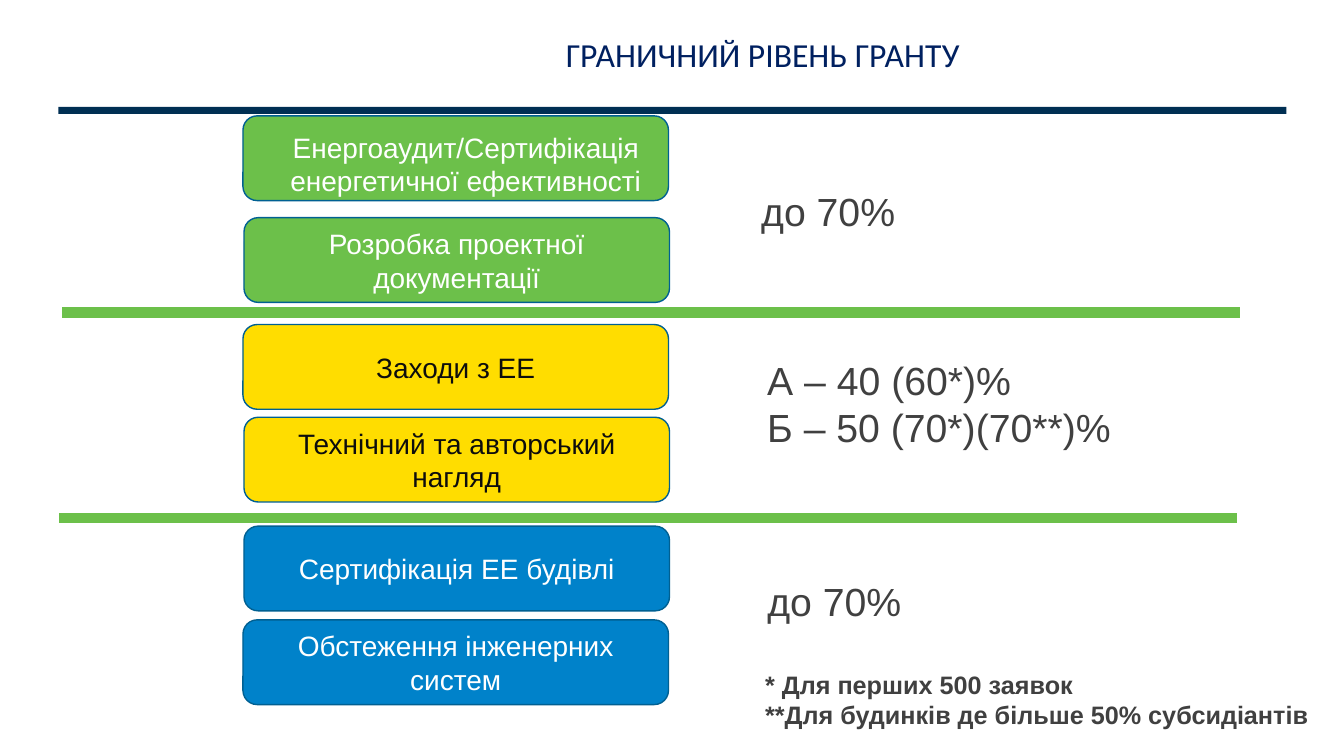
from dataclasses import dataclass

from lxml import etree
from pptx import Presentation
from pptx.dml.color import RGBColor
from pptx.enum import shapes, text
from pptx.oxml import ns
from pptx.util import Inches, Pt


@dataclass(frozen=True)
class Theme:
    heading_font: str = "Calibri"
    body_font: str = "Arial"
    title: str = "002060"
    rule: str = "002F53"
    outline: str = "006092"
    green: str = "6CC04A"
    yellow: str = "FFDD00"
    blue: str = "0082CA"
    light: str = "FFFFFF"
    dark: str = "0D0D0D"
    gray: str = "404040"
    title_size: int = 24
    step_size: int = 20
    rate_size: int = 28
    note_size: int = 18


def write(tf, lines, *, size, color, font, bold=False, align=text.PP_ALIGN.LEFT,
          anchor=text.MSO_ANCHOR.TOP, inset=None, spacing=None):
    """Fill a text frame, one paragraph per line."""
    tf.word_wrap = True
    tf.auto_size = text.MSO_AUTO_SIZE.NONE
    tf.vertical_anchor = anchor
    if inset is not None:
        tf.margin_left = tf.margin_right = Inches(inset)
        tf.margin_top = tf.margin_bottom = Inches(inset)
    for i, line in enumerate(lines):
        p = tf.add_paragraph() if i else tf.paragraphs[0]
        p.alignment = align
        if spacing:
            p.line_spacing = spacing
        r = p.add_run()
        r.text = line
        r.font.name, r.font.size, r.font.bold = font, Pt(size), bold
        r.font.color.rgb = RGBColor.from_string(color)


class GrantSlide:
    def __init__(self, prs, theme):
        self.theme = theme
        self.s = prs.slides.add_slide(prs.slide_layouts[5])

    def title(self, line, box):
        sp = self.s.shapes.title
        sp.left, sp.top, sp.width, sp.height = map(Inches, box)
        write(sp.text_frame, [line], size=self.theme.title_size,
              color=self.theme.title, font=self.theme.heading_font,
              align=text.PP_ALIGN.CENTER, spacing=0.9)

    def block(self, kind, box, fill, outline=None):
        sp = self.s.shapes.add_shape(kind, *map(Inches, box))
        sp.shadow.inherit = False
        sp.fill.solid()
        sp.fill.fore_color.rgb = RGBColor.from_string(fill)
        if outline:
            sp.line.color.rgb = RGBColor.from_string(outline)
            sp.line.width = Pt(1)
        else:
            sp.line.fill.background()
        return sp

    def step(self, left, top, fill, color, label, label_box=None):
        """Rounded step; its label may sit in a box of its own."""
        sp = self.block(shapes.MSO_SHAPE.ROUNDED_RECTANGLE,
                        (left, top, 4.22, 0.84), fill, self.theme.outline)
        look = dict(size=self.theme.step_size, color=color)
        if label_box:
            self.label([label], label_box, align=text.PP_ALIGN.CENTER, inset=0, **look)
        else:
            write(sp.text_frame, [label], font=self.theme.body_font,
                  align=text.PP_ALIGN.CENTER, anchor=text.MSO_ANCHOR.MIDDLE, **look)

    def label(self, lines, box, **look):
        sp = self.s.shapes.add_textbox(*map(Inches, box))
        write(sp.text_frame, lines, font=self.theme.body_font, **look)

    def rate(self, lines, box):
        self.label(lines, box, size=self.theme.rate_size, color=self.theme.gray,
                   anchor=text.MSO_ANCHOR.MIDDLE, inset=0)

    def divider(self, left, top):
        line = self.s.shapes.add_connector(
            shapes.MSO_CONNECTOR.STRAIGHT, Inches(left), Inches(top),
            Inches(left + 11.68), Inches(top))
        line.line.color.rgb = RGBColor.from_string(self.theme.green)
        line.line.width = Pt(7.5)
        etree.SubElement(line._element.spPr, ns.qn("a:effectLst"))


def main():
    prs = Presentation()
    prs.slide_width, prs.slide_height = Inches(13.33), Inches(7.5)
    theme = Theme()
    slide = GrantSlide(prs, theme)

    slide.title("ГРАНИЧНИЙ РІВЕНЬ ГРАНТУ", (2.72, 0.33, 9.69, 0.69))
    slide.block(shapes.MSO_SHAPE.RECTANGLE, (0.58, 1.06, 12.18, 0.07), theme.rule)

    green = (theme.green, theme.light)
    yellow = (theme.yellow, theme.dark)
    blue = (theme.blue, theme.light)
    slide.step(2.41, 1.15, *green, "Енергоаудит/Сертифікація енергетичної ефективності",
               label_box=(2.78, 1.29, 3.68, 0.67))
    for left, top, colors, label in (
        (2.42, 2.16, green, "Розробка проектної документації"),
        (2.41, 3.22, yellow, "Заходи з ЕЕ"),
        (2.42, 4.14, yellow, "Технічний та авторський нагляд"),
        (2.42, 5.22, blue, "Сертифікація ЕЕ будівлі"),
        (2.41, 6.15, blue, "Обстеження інженерних систем"),
    ):
        slide.step(left, top, *colors, label)

    slide.rate(["до 70%"], (7.55, 1.86, 1.66, 0.47))
    slide.rate(["А – 40 (60*)%", "Б – 50 (70*)(70**)%"], (7.61, 3.53, 3.97, 0.94))
    slide.rate(["до 70%"], (7.61, 5.73, 1.81, 0.47))
    slide.label(["* Для перших 500 заявок", "**Для будинків де більше 50% субсидіантів"],
                (7.49, 6.59, 5.84, 0.71), size=theme.note_size, color=theme.gray, bold=True)

    for left, top in ((0.62, 3.1), (0.59, 5.14)):
        slide.divider(left, top)
    prs.save("out.pptx")


if __name__ == "__main__":
    main()
